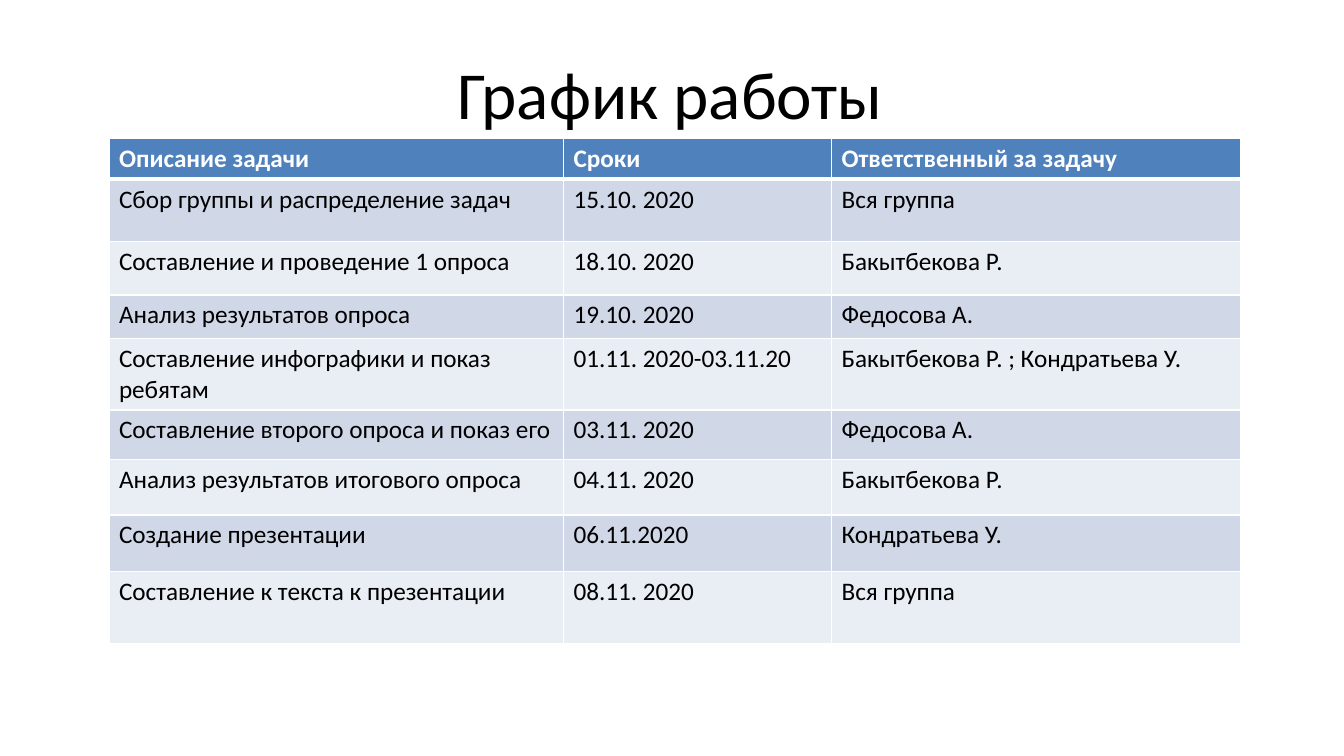
from dataclasses import dataclass

from lxml import etree
from pptx import Presentation
from pptx import util as u
from pptx.dml.color import RGBColor
from pptx.enum import text
from pptx.oxml import ns

FONT = "Calibri"
BLACK = RGBColor(0x00, 0x00, 0x00)
WHITE = RGBColor(0xFF, 0xFF, 0xFF)
HEADER_BLUE = RGBColor(0x4F, 0x81, 0xBD)
BAND_DARK = RGBColor(0xD0, 0xD8, 0xE8)
BAND_LIGHT = RGBColor(0xE9, 0xED, 0xF4)


@dataclass(frozen=True)
class Task:
    description: str
    dates: str
    owner: str
    height: float


HEADER = Task("Описание задачи", "Сроки", "Ответственный за задачу", 29)
TASKS = [
    Task("Сбор группы и распределение задач", "15.10. 2020", "Вся группа", 44.6),
    Task("Составление и проведение 1 опроса", "18.10. 2020", "Бакытбекова Р.", 38),
    Task("Анализ результатов опроса", "19.10. 2020", "Федосова А.", 31),
    Task("Составление инфографики и показ ребятам", "01.11. 2020-03.11.20",
         "Бакытбекова Р. ; Кондратьева У.", 51),
    Task("Составление второго опроса и показ его", "03.11. 2020", "Федосова А.", 35.5),
    Task("Анализ результатов итогового опроса", "04.11. 2020", "Бакытбекова Р.", 39.5),
    Task("Создание презентации", "06.11.2020", "Кондратьева У.", 40.7),
    Task("Составление к текста к презентации", "08.11. 2020", "Вся группа", 51),
]
COLUMN_WIDTHS = [324.7, 191.5, 292.3]


def style_text(frame, size: float, color: RGBColor, bold: bool = False) -> None:
    for para in frame.paragraphs:
        for span in para.runs:
            span.font.name = FONT
            span.font.size = u.Pt(size)
            span.font.color.rgb = color
            span.font.bold = bold


def set_border(cell, side: str, width: float) -> None:
    properties = cell._tc.get_or_add_tcPr()
    line = etree.SubElement(properties, ns.qn(f"a:{side}"), w=str(u.Pt(width)))
    fill = etree.SubElement(line, ns.qn("a:solidFill"))
    etree.SubElement(fill, ns.qn("a:srgbClr"), val=str(WHITE))


def fill_row(table, index: int, task: Task) -> None:
    is_header = index == 0
    table.rows[index].height = u.Pt(task.height)
    band = HEADER_BLUE if is_header else BAND_DARK if index % 2 else BAND_LIGHT
    for column, words in enumerate((task.description, task.dates, task.owner)):
        cell = table.cell(index, column)
        cell.text_frame.text = words
        style_text(cell.text_frame, 18, WHITE if is_header else BLACK, is_header)
        # Borders come before the fill in the cell properties
        set_border(cell, "lnL", 1)
        set_border(cell, "lnR", 1)
        set_border(cell, "lnT", 3 if index == 1 else 1)
        set_border(cell, "lnB", 3 if is_header else 1)
        cell.fill.solid()
        cell.fill.fore_color.rgb = band


def add_schedule(page) -> None:
    rows = [HEADER, *TASKS]
    frame = page.shapes.add_table(
        len(rows), len(COLUMN_WIDTHS), u.Pt(77.8), u.Pt(98.9),
        u.Pt(sum(COLUMN_WIDTHS)), u.Pt(sum(row.height for row in rows)))
    for column, width in zip(frame.table.columns, COLUMN_WIDTHS):
        column.width = u.Pt(width)
    for index, task in enumerate(rows):
        fill_row(frame.table, index, task)


def add_title(page) -> None:
    box = page.shapes.add_textbox(u.Pt(319.7), u.Pt(33.8), u.Pt(344.9), u.Pt(65.5))
    frame = box.text_frame
    frame.word_wrap = True
    frame.auto_size = text.MSO_AUTO_SIZE.SHAPE_TO_FIT_TEXT
    frame.text = "График работы"
    style_text(frame, 48, BLACK)


def main() -> None:
    deck = Presentation()
    deck.slide_width, deck.slide_height = u.Pt(960), u.Pt(540)
    page = deck.slides.add_slide(deck.slide_layouts[6])
    # Schedule table, then the heading above it
    add_schedule(page)
    add_title(page)
    deck.save("out.pptx")


if __name__ == "__main__":
    main()
